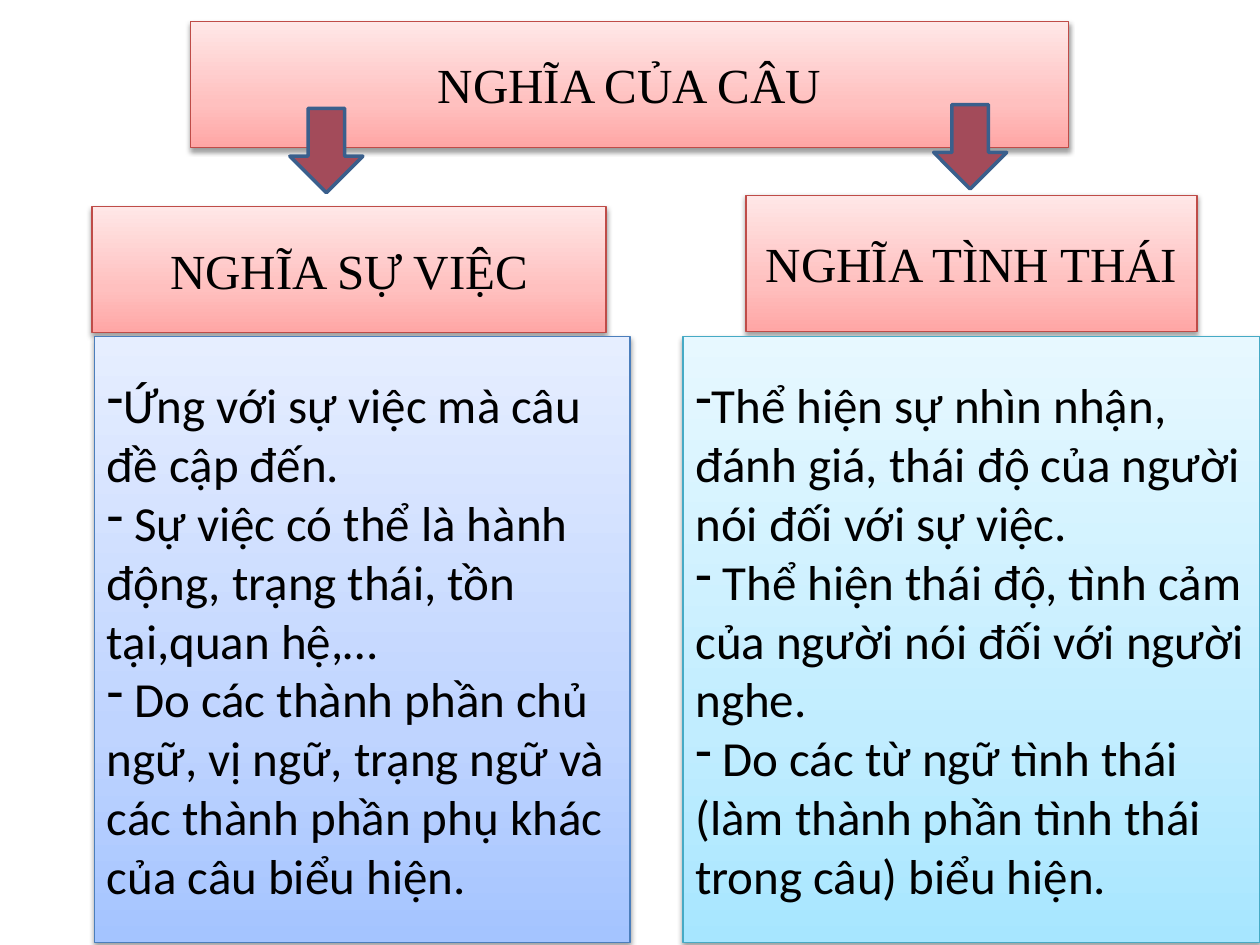
from copy import deepcopy
from lxml import etree
from pptx import Presentation
from pptx.dml.color import RGBColor
from pptx.enum import shapes, text
from pptx.oxml.ns import qn
from pptx.util import Inches, Pt

COLORS = {
    "red": ("FFA6A5", "FFC0BF", "FFE7E7"), "red_line": "BF4C48",
    "blue": ("A4C4FF", "BFD4FF", "E6EEFF"), "blue_line": "4B7EBC",
    "aqua": ("A7E6FF", "C1EDFF", "E7F8FF"), "aqua_line": "46AAC5",
    "arrow": "A34B5A", "arrow_line": "3A5F8C", "text": "000000",
}
STOPS = (0, 0.35, 1)


def add_shape(s, kind, box, line, width):
    sp = s.shapes.add_shape(kind, *[Inches(v) for v in box])
    sp.shadow.inherit = False
    sp.line.color.rgb = RGBColor.from_string(COLORS[line])
    sp.line.width = Pt(width)
    return sp


def add_panel(s, box, color, font, lines, bullets):
    sp = add_shape(s, shapes.MSO_SHAPE.RECTANGLE, box, color + "_line", 0.75)
    sp.fill.gradient()
    sp.fill.gradient_angle = 90
    spPr = sp._element.spPr
    stops = spPr.find(".//" + qn("a:gsLst"))
    stops.insert(1, deepcopy(stops[0]))
    for stop, position, value in zip(sp.fill.gradient_stops, STOPS, COLORS[color]):
        stop.position = position
        stop.color.rgb = RGBColor.from_string(value)
    shadow = etree.SubElement(spPr.find(qn("a:effectLst")), qn("a:outerShdw"),
                              blurRad="40000", dist="20000", dir="5400000", rotWithShape="0")
    black = etree.SubElement(shadow, qn("a:srgbClr"), val="000000")
    etree.SubElement(black, qn("a:alpha"), val="38000")

    tf = sp.text_frame
    tf.word_wrap = True
    tf.vertical_anchor = text.MSO_ANCHOR.MIDDLE
    for i, line in enumerate(lines):
        p = tf.add_paragraph() if i else tf.paragraphs[0]
        p.alignment = text.PP_ALIGN.LEFT if bullets else text.PP_ALIGN.CENTER
        if bullets:
            pPr = p._p.get_or_add_pPr()
            etree.SubElement(pPr, qn("a:buFontTx"))
            etree.SubElement(pPr, qn("a:buChar"), char="-")
        r = p.add_run()
        r.text = line
        r.font.name = font
        r.font.size = Pt(28)
        r.font.color.rgb = RGBColor.from_string(COLORS["text"])


prs = Presentation()
prs.slide_width, prs.slide_height = Inches(10), Inches(7.5)
s = prs.slides.add_slide(prs.slide_layouts[6])

headings = [
    ((0.73, 1.64, 4.08, 1), "NGHĨA SỰ VIỆC"),
    ((5.92, 1.55, 3.58, 1.08), "NGHĨA TÌNH THÁI"),
    ((1.51, 0.17, 6.97, 1), "NGHĨA CỦA CÂU"),
]
details = [
    ((0.75, 2.67, 4.25, 4.81), "blue", [
        "Ứng với sự việc mà câu đề cập đến.",
        " Sự việc có thể là hành động, trạng thái, tồn tại,quan hệ,…",
        " Do các thành phần chủ ngữ, vị ngữ, trạng ngữ và các thành phần phụ khác của câu biểu hiện.",
    ]),
    ((5.42, 2.67, 4.58, 4.81), "aqua", [
        "Thể hiện sự nhìn nhận, đánh giá, thái độ của người nói đối với sự việc.",
        " Thể hiện thái độ, tình cảm của người nói đối với người nghe.",
        " Do các từ ngữ tình thái (làm thành phần tình thái trong câu) biểu hiện.",
    ]),
]
for box, heading in headings:
    add_panel(s, box, "red", "Times New Roman", [heading], False)
for box, color, lines in details:
    add_panel(s, box, color, "Calibri", lines, True)

for left, top in ((2.3, 0.86), (7.41, 0.83)):
    sp = add_shape(s, shapes.MSO_SHAPE.DOWN_ARROW, (left, top, 0.58, 0.67), "arrow_line", 2)
    sp.fill.solid()
    sp.fill.fore_color.rgb = RGBColor.from_string(COLORS["arrow"])

prs.save("out.pptx")
